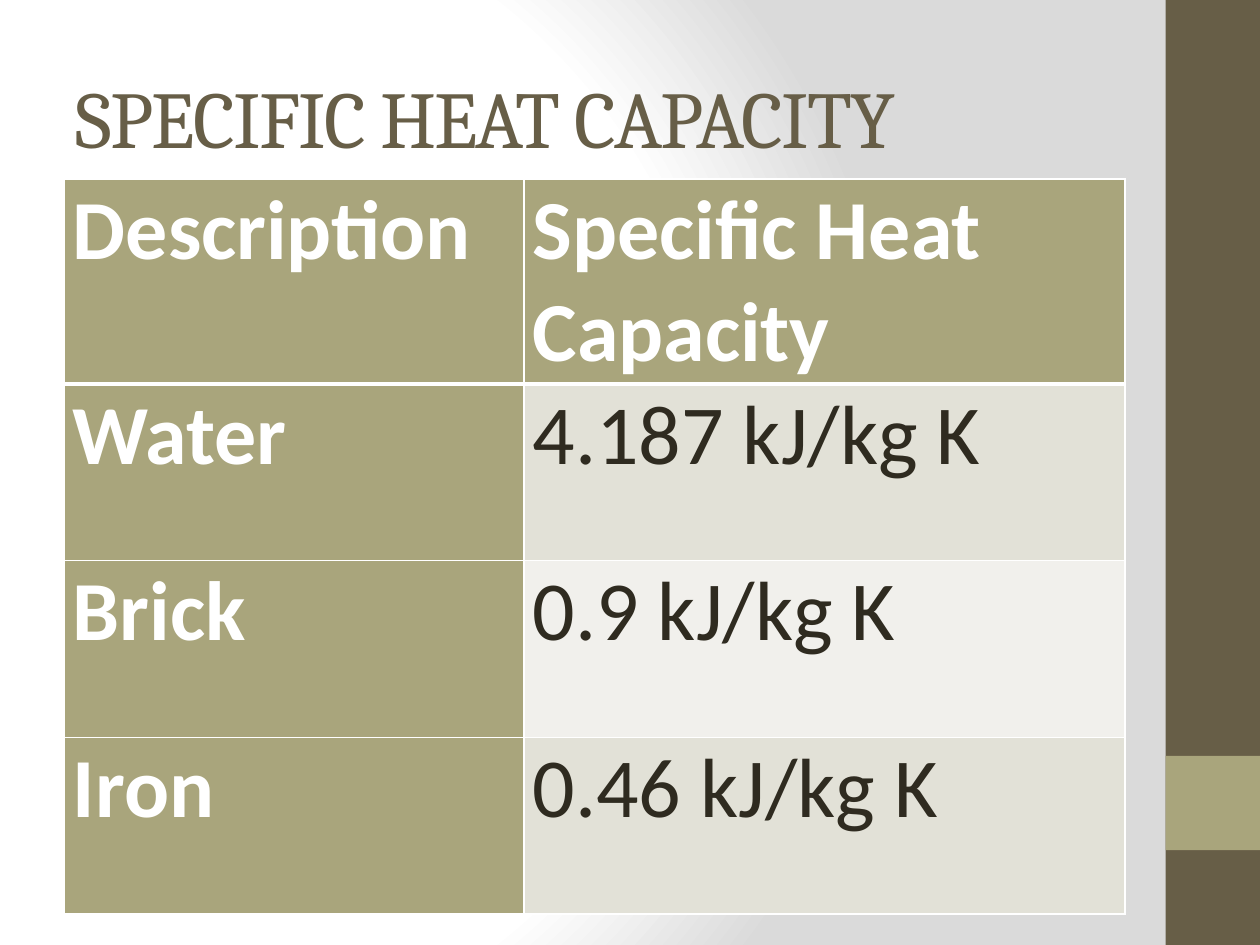
from lxml.etree import SubElement
from pptx import Presentation
from pptx.dml.color import RGBColor
from pptx.enum.shapes import MSO_SHAPE
from pptx.enum.text import MSO_ANCHOR, MSO_AUTO_SIZE, PP_ALIGN
from pptx.oxml import parse_xml
from pptx.oxml.ns import nsdecls, qn
from pptx.util import Cm, Pt

BROWN = RGBColor(0x67, 0x5E, 0x47)
OLIVE = RGBColor(0xA9, 0xA5, 0x7C)
DARK = RGBColor(0x2F, 0x2B, 0x20)
WHITE = RGBColor(0xFF, 0xFF, 0xFF)
GREY = RGBColor(0xDA, 0xDA, 0xDA)
BANDS = (RGBColor(0xE2, 0xE1, 0xD7), RGBColor(0xF1, 0xF0, 0xEC))

ROWS = (
    ("Description", "Specific Heat Capacity"),
    ("Water", "4.187 kJ/kg K"),
    ("Brick", "0.9 kJ/kg K"),
    ("Iron", "0.46 kJ/kg K"),
)
COLUMN_WIDTHS = (Cm(9.27), Cm(12.12))
ROW_HEIGHT = Cm(3.56)


def set_background(page):
    page.background.fill.gradient()
    gradient = page.element.find(".//" + qn("a:gradFill"))
    stops = "".join(
        f'<a:gs pos="{position * 1000}"><a:srgbClr val="{color}"/></a:gs>'
        for position, color in ((0, WHITE), (75, WHITE), (100, GREY))
    )
    radial = parse_xml(
        f'<a:gradFill rotWithShape="1" {nsdecls("a")}><a:gsLst>{stops}</a:gsLst>'
        '<a:path path="circle"><a:fillToRect l="20000" t="50000" r="100000" b="50000"/>'
        "</a:path></a:gradFill>"
    )
    gradient.getparent().replace(gradient, radial)


def add_block(page, top, height, color):
    block = page.shapes.add_shape(MSO_SHAPE.RECTANGLE, Cm(23.5), top, Cm(1.9), height)
    block.shadow.inherit = False
    block.fill.solid()
    block.fill.fore_color.rgb = color
    block.line.fill.background()


def format_span(span, font, size, color, bold=False):
    span.font.name = font
    span.font.size = Pt(size)
    span.font.color.rgb = color
    span.font.bold = bold


def set_title(page, text):
    title = page.shapes.title
    title.left, title.top, title.width, title.height = Cm(1.27), Cm(0.76), Cm(21.16), Cm(3.18)
    frame = title.text_frame
    frame.text = text
    frame.word_wrap = True
    frame.auto_size = MSO_AUTO_SIZE.NONE
    frame.vertical_anchor = MSO_ANCHOR.MIDDLE
    para = frame.paragraphs[0]
    para.alignment = PP_ALIGN.LEFT
    span = para.runs[0]
    format_span(span, "Cambria", 46, BROWN)
    span.font._element.set("spc", "-100")


def set_borders(cell, bottom_width):
    properties = cell._tc.get_or_add_tcPr()
    widths = {"a:lnL": 1, "a:lnR": 1, "a:lnT": 1, "a:lnB": bottom_width}
    for index, (tag, width) in enumerate(widths.items()):
        line = SubElement(properties, qn(tag), w=str(Pt(width)))
        fill = SubElement(line, qn("a:solidFill"))
        SubElement(fill, qn("a:srgbClr"), val=str(WHITE))
        properties.insert(index, line)


def fill_cell(cell, text, fill, color, bold, bottom_width):
    cell.text = text
    cell.margin_left = cell.margin_right = Cm(0.18)
    cell.margin_top = cell.margin_bottom = 0
    cell.fill.solid()
    cell.fill.fore_color.rgb = fill
    format_span(cell.text_frame.paragraphs[0].runs[0], "Calibri", 48, color, bold)
    set_borders(cell, bottom_width)


def add_capacity_table(page):
    table = page.shapes.add_table(
        len(ROWS), len(COLUMN_WIDTHS), Cm(1.29), Cm(3.61),
        sum(COLUMN_WIDTHS), ROW_HEIGHT * len(ROWS),
    ).table
    table.first_col = True
    for column, width in zip(table.columns, COLUMN_WIDTHS):
        column.width = width
    for row_index, texts in enumerate(ROWS):
        table.rows[row_index].height = ROW_HEIGHT
        for column_index, text in enumerate(texts):
            heading = row_index == 0 or column_index == 0
            fill = OLIVE if heading else BANDS[(row_index - 1) % 2]
            color = WHITE if heading else DARK
            bottom_width = 3 if row_index == 0 else 1
            cell = table.cell(row_index, column_index)
            fill_cell(cell, text, fill, color, heading, bottom_width)


def main():
    deck = Presentation()
    deck.slide_width, deck.slide_height = Cm(25.4), Cm(19.05)
    page = deck.slides.add_slide(deck.slide_layouts[5])
    set_background(page)
    add_block(page, 0, deck.slide_height, BROWN)
    add_block(page, Cm(15.24), Cm(1.9), OLIVE)
    set_title(page, "SPECIFIC HEAT CAPACITY")
    add_capacity_table(page)
    deck.save("out.pptx")


if __name__ == "__main__":
    main()
